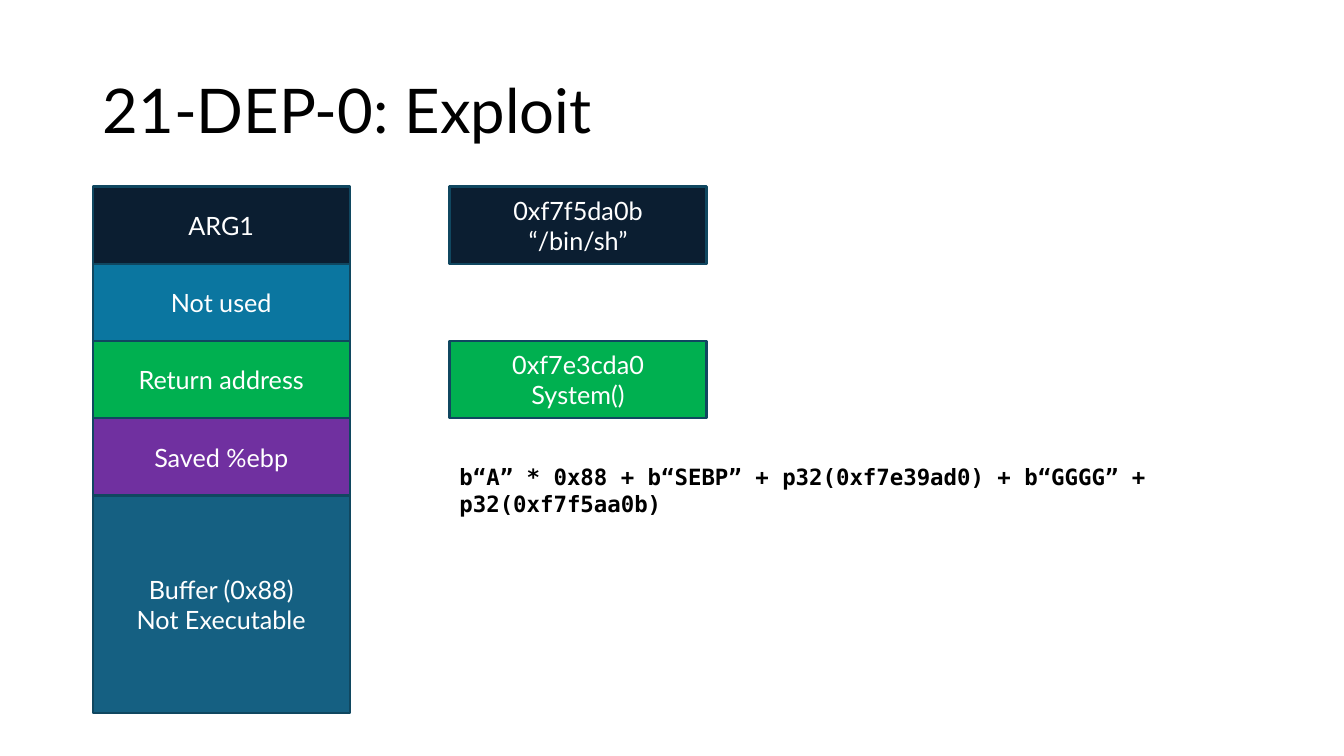
from pptx import Presentation
from pptx import util as u
from pptx.dml.color import RGBColor
from pptx.enum import shapes, text

PX = 3048
BLACK = RGBColor(0x00, 0x00, 0x00)
WHITE = RGBColor(0xFF, 0xFF, 0xFF)
EDGE = RGBColor(0x10, 0x47, 0x60)
NAVY = RGBColor(0x0B, 0x1E, 0x31)
BLUE = RGBColor(0x0B, 0x76, 0xA0)
GREEN = RGBColor(0x00, 0xB0, 0x50)
PURPLE = RGBColor(0x70, 0x30, 0xA0)
TEAL = RGBColor(0x15, 0x60, 0x82)

ROW, BUFFER = 230, 648
STACK = [
    ("ARG1", NAVY, ROW),
    ("Not used", BLUE, ROW),
    ("Return address", GREEN, ROW),
    ("Saved %ebp", PURPLE, ROW),
    ("Buffer (0x88)\nNot Executable", TEAL, BUFFER),
]
VALUES = {0: "0xf7f5da0b\n“/bin/sh”", 2: "0xf7e3cda0\nSystem()"}
CODE = "b“A” * 0x88 + b“SEBP” + p32(0xf7e39ad0) + b“GGGG” + p32(0xf7f5aa0b)"


def emu(box):
    """Turn a box in px into EMU."""
    return [n * PX for n in box]


def write(shape, words, color, size, font="Lato", bold=False,
          align=text.PP_ALIGN.LEFT, anchor=text.MSO_ANCHOR.MIDDLE, lead=1.0):
    """Fill a shape with formatted lines of text."""
    frame = shape.text_frame
    frame.word_wrap, frame.vertical_anchor = True, anchor
    frame.text = words
    look = {"name": font, "size": u.Pt(size), "bold": bold}
    for para in frame.paragraphs:
        para.alignment, para.line_spacing = align, lead
        for run in para.runs:
            run.font.color.rgb = color
            for key, value in look.items():
                setattr(run.font, key, value)


def label(slide, box, words, size, **look):
    """Place black text in a box."""
    write(slide.shapes.add_textbox(*emu(box)), words, BLACK, size, **look)


def cell(slide, box, words, fill):
    """Draw one block of memory with a centred caption."""
    shape = slide.shapes.add_shape(shapes.MSO_SHAPE.RECTANGLE, *emu(box))
    shape.shadow.inherit = False
    shape.fill.solid()
    shape.fill.fore_color.rgb = fill
    shape.line.color.rgb = EDGE
    shape.line.width = u.Pt(1.5)
    write(shape, words, WHITE, 18, align=text.PP_ALIGN.CENTER)


def memory(slide, left, top, width, shift):
    """Stack the memory blocks and set their values beside them."""
    tops = [top + sum(row[2] for row in STACK[:i]) for i in range(len(STACK))]
    for i in reversed(range(len(STACK))):
        words, fill, height = STACK[i]
        cell(slide, (left, tops[i], width, height), words, fill)
    for i, words in VALUES.items():
        cell(slide, (left + shift, tops[i], width, ROW), words, STACK[i][1])


def main():
    """Build and save the slide."""
    deck = Presentation()
    deck.slide_width, deck.slide_height = emu((4000, 2250))
    slide = deck.slides.add_slide(deck.slide_layouts[6])
    label(slide, (276, 120, 3450, 435), "21-DEP-0: Exploit", 44, lead=0.9)
    memory(slide, 276, 555, 765, 1062)
    label(slide, (1338, 1365, 2526, 111), CODE, 16, font="DejaVu Sans Mono",
          bold=True, anchor=text.MSO_ANCHOR.TOP)
    deck.save("out.pptx")


if __name__ == "__main__":
    main()
